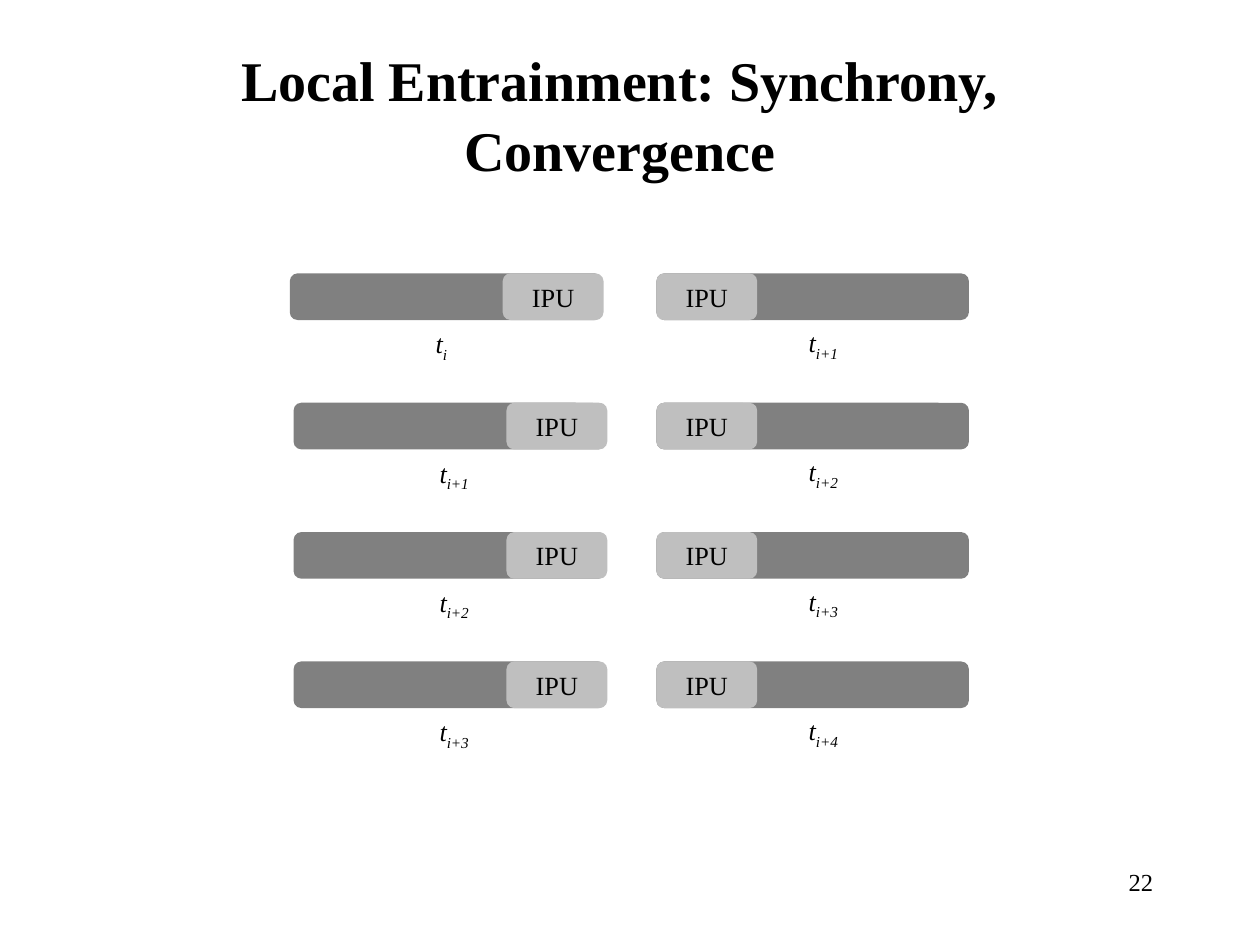
from pptx import Presentation
from pptx.dml.color import RGBColor
from pptx.enum.shapes import MSO_SHAPE
from pptx.enum.text import MSO_ANCHOR, MSO_AUTO_SIZE, PP_ALIGN
from pptx.util import Inches, Pt

ROUNDED = MSO_SHAPE.ROUNDED_RECTANGLE
MIDDLE = MSO_ANCHOR.MIDDLE
LEFT, CENTER, RIGHT = PP_ALIGN.LEFT, PP_ALIGN.CENTER, PP_ALIGN.RIGHT
NO_FIT, GROW = MSO_AUTO_SIZE.NONE, MSO_AUTO_SIZE.SHAPE_TO_FIT_TEXT

FONT = "Times New Roman"
COLORS = {"text": "000000", "turn": "808080", "ipu": "BFBFBF"}

BAR_W, BAR_H, IPU_W = 2.48, 0.37, 0.8
ROW_TOP, ROW_PITCH = 2.17, 3.08 / 3
ROWS = 4
RIGHT_X = 5.21


def add_text(sp, text, size=15, bold=False, italic=False, align=LEFT, baseline=None):
    """Append a formatted run to the first paragraph of a shape."""
    p = sp.text_frame.paragraphs[0]
    p.alignment = align
    r = p.add_run()
    r.text = text
    font = r.font
    font.name, font.size, font.bold, font.italic = FONT, Pt(size), bold, italic
    font.color.rgb = RGBColor.from_string(COLORS["text"])
    if baseline is not None:
        font._element.set("baseline", str(baseline * 1000))


def add_bar(shapes, x, y, w, color):
    sp = shapes.add_shape(ROUNDED, Inches(x), Inches(y), Inches(w), Inches(BAR_H))
    sp.shadow.inherit = False
    sp.fill.solid()
    sp.fill.fore_color.rgb = RGBColor.from_string(COLORS[color])
    sp.line.fill.background()
    return sp


def add_turn(s, x, y, index, ipu_dx, label_dx, label_dy):
    """Place one turn: its bar, the IPU at one end and the time label below."""
    shapes = s.shapes.add_group_shape().shapes
    add_bar(shapes, x, y, BAR_W, "turn")
    ipu = add_bar(shapes, x + ipu_dx, y, IPU_W, "ipu")
    ipu.text_frame.vertical_anchor = MIDDLE
    add_text(ipu, "IPU", align=CENTER)

    label_w = 0.53 if index else 0.36
    label = shapes.add_textbox(Inches(x + label_dx), Inches(y + label_dy),
                               Inches(label_w), Inches(0.35))
    label.text_frame.word_wrap = False
    label.text_frame.auto_size = GROW
    add_text(label, "t", italic=True)
    add_text(label, f"i+{index}" if index else "i", italic=True, baseline=-25)


def add_title(s, x, y, w, h):
    title = s.shapes.title
    title.left, title.top, title.width, title.height = map(Inches, (x, y, w, h))
    tf = title.text_frame
    tf.word_wrap = True
    tf.auto_size = NO_FIT
    tf.vertical_anchor = MIDDLE
    tf.paragraphs[0].line_spacing = 1.04
    add_text(title, "Local Entrainment: Synchrony, Convergence", size=32,
             bold=True, align=CENTER)


def add_page_number(s, x, y, w, h):
    sp = s.shapes.add_textbox(Inches(x), Inches(y), Inches(w), Inches(h))
    sp.text_frame.word_wrap = True
    add_text(sp, "22", size=14, align=RIGHT)


def main():
    prs = Presentation()
    prs.slide_width, prs.slide_height = Inches(10), Inches(7.5)
    s = prs.slides.add_slide(prs.slide_layouts[5])
    add_title(s, 0.67, 0.39, 8.5, 1.01)
    for row in range(ROWS):
        y = ROW_TOP + row * ROW_PITCH
        left_x = 2.33 if row else 2.3
        add_turn(s, left_x, y, row, ipu_dx=1.69, label_dx=1.06, label_dy=0.38)
        add_turn(s, RIGHT_X, y, row + 1, ipu_dx=0, label_dx=1.11, label_dy=0.37)
    add_page_number(s, 7.17, 6.83, 2.08, 0.5)
    prs.save("out.pptx")


if __name__ == "__main__":
    main()
